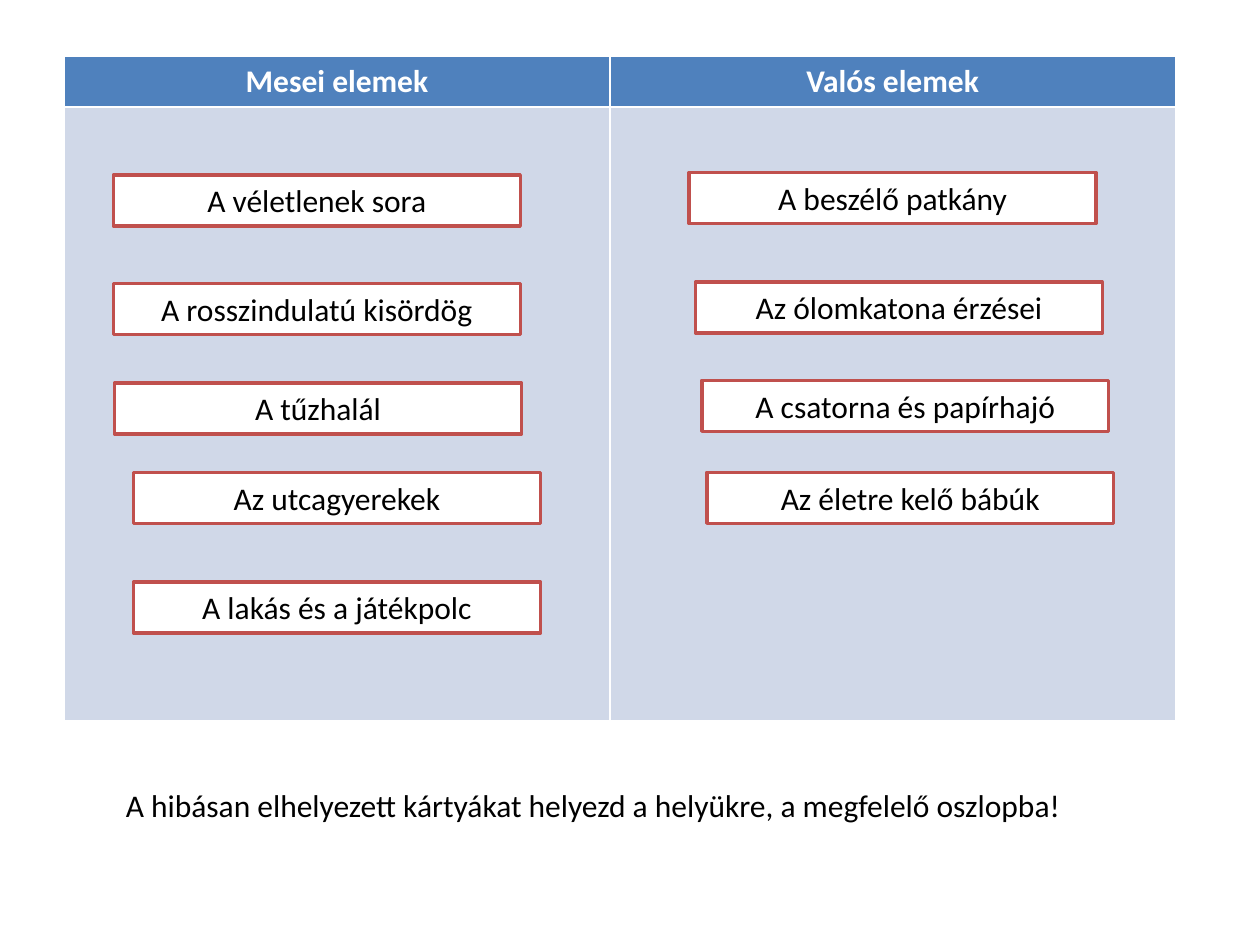
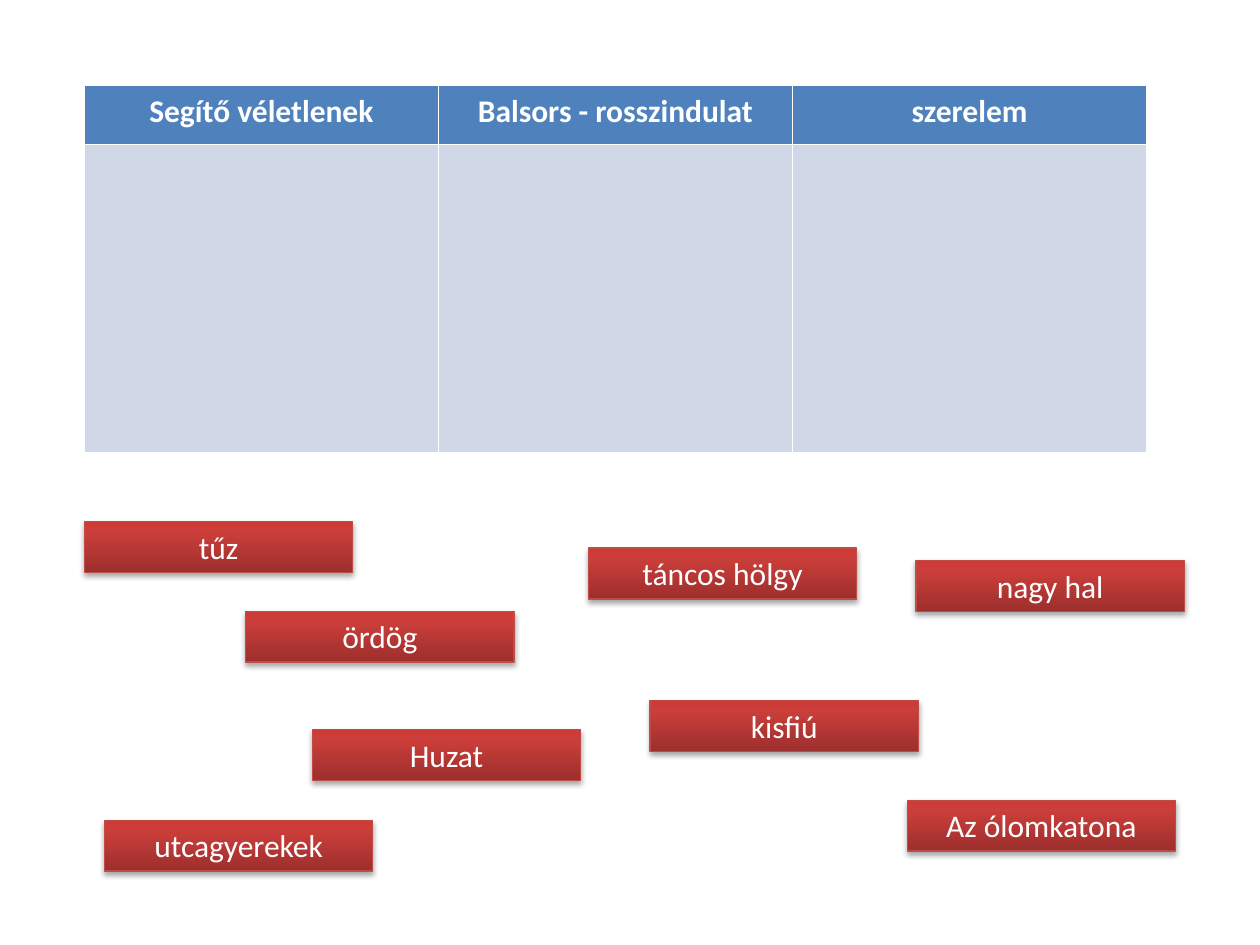
from lxml import etree
from pptx import Presentation
from pptx.dml.color import RGBColor
from pptx.enum.shapes import MSO_SHAPE
from pptx.enum.text import MSO_ANCHOR, MSO_AUTO_SIZE, PP_ALIGN
from pptx.oxml import parse_xml
from pptx.oxml.ns import nsdecls, qn
from pptx.util import Inches, Pt

RECTANGLE = MSO_SHAPE.RECTANGLE
TOP = MSO_ANCHOR.TOP
GROW = MSO_AUTO_SIZE.SHAPE_TO_FIT_TEXT
LEFT, CENTER = PP_ALIGN.LEFT, PP_ALIGN.CENTER

WHITE = RGBColor(0xFF, 0xFF, 0xFF)
BLACK = RGBColor(0, 0, 0)
HEADER_BLUE = RGBColor(0x4F, 0x81, 0xBD)
BODY_BLUE = RGBColor(0xD0, 0xD8, 0xE8)
CARD_BORDER = RGBColor(0xC0, 0x50, 0x4D)
WORD_BORDER = RGBColor(0xBF, 0x4C, 0x48)
WORD_GRADIENT = (
    (0, RGBColor(0x9C, 0x2F, 0x2D)),
    (80, RGBColor(0xCB, 0x3E, 0x3A)),
    (100, RGBColor(0xCE, 0x3B, 0x37)),
)

FONT = "Calibri"
TEXT_SIZE = Pt(18)
SLIDE_WIDTH, SLIDE_HEIGHT = Inches(10), Inches(7.5)
LABEL_HEIGHT = 5.38
CARD_WIDTH = 32.3
WORD_WIDTH = 21.3

STORY_CARDS = (
    ("A véletlenek sora", 9, 18.53),
    ("A rosszindulatú kisördög", 9, 30),
    ("A tűzhalál", 9.1, 40.53),
    ("Az utcagyerekek", 10.6, 50),
    ("A lakás és a játékpolc", 10.6, 61.6),
    ("A beszélő patkány", 54.7, 18.27),
    ("Az ólomkatona érzései", 55.2, 29.87),
    ("A csatorna és papírhajó", 55.7, 40.27),
    ("Az életre kelő bábúk", 56.1, 50),
)
WORDS = (
    ("tűz", 6.7, 55.2),
    ("ördög", 19.5, 64.67),
    ("Huzat", 24.8, 77.2),
    ("utcagyerekek", 8.3, 86.8),
    ("táncos hölgy", 46.7, 58),
    ("kisfiú", 51.6, 74.13),
    ("nagy hal", 72.7, 59.33),
    ("Az ólomkatona", 72, 84.67),
)


def across(percent):
    return round(SLIDE_WIDTH * percent / 100)


def down(percent):
    return round(SLIDE_HEIGHT * percent / 100)


def place(left, top, width, height):
    return across(left), down(top), across(width), down(height)


def write(frame, text, color, align=CENTER, bold=False):
    frame.text = text
    paragraph = frame.paragraphs[0]
    paragraph.alignment = align
    for run in paragraph.runs:
        run.font.name = FONT
        run.font.size = TEXT_SIZE
        run.font.bold = bold
        run.font.color.rgb = color


def add_sorting_table(slide, left, top, headings, widths, heights):
    area = place(left, top, sum(widths), sum(heights))
    table = slide.shapes.add_table(2, len(headings), *area).table
    for row, height in zip(table.rows, heights):
        row.height = down(height)
    for index, (heading, width) in enumerate(zip(headings, widths)):
        table.columns[index].width = across(width)
        for row, color in enumerate((HEADER_BLUE, BODY_BLUE)):
            fill = table.cell(row, index).fill
            fill.solid()
            fill.fore_color.rgb = color
        write(table.cell(0, index).text_frame, heading, WHITE, bold=True)


def add_label(slide, text, left, top, width, color, border, border_width):
    label = slide.shapes.add_shape(RECTANGLE, *place(left, top, width, LABEL_HEIGHT))
    label.shadow.inherit = False
    label.line.color.rgb = border
    label.line.width = border_width
    frame = label.text_frame
    frame.word_wrap = True
    frame.auto_size = GROW
    frame.vertical_anchor = TOP
    write(frame, text, color)
    return label


def add_card(slide, text, left, top):
    card = add_label(slide, text, left, top, CARD_WIDTH, BLACK, CARD_BORDER, Pt(2))
    card.fill.solid()
    card.fill.fore_color.rgb = WHITE


def set_word_gradient(fill):
    fill.gradient()
    stops = fill._xPr.find(qn("a:gradFill")).find(qn("a:gsLst"))
    for stop in list(stops):
        stops.remove(stop)
    for percent, color in WORD_GRADIENT:
        stop = etree.SubElement(stops, qn("a:gs"), pos=str(percent * 1000))
        etree.SubElement(stop, qn("a:srgbClr"), val=str(color))
    fill._xPr.find(qn("a:gradFill")).find(qn("a:lin")).set("ang", str(270 * 60000))


def set_soft_shadow(shape):
    effects = shape._element.spPr.find(qn("a:effectLst"))
    effects.append(parse_xml(
        f'<a:outerShdw {nsdecls("a")} blurRad="{Pt(3.1)}" dist="{Pt(1.8)}" '
        f'dir="{90 * 60000}" rotWithShape="0"><a:srgbClr val="{BLACK}">'
        '<a:alpha val="35000"/></a:srgbClr></a:outerShdw>'
    ))


def add_word(slide, text, left, top):
    word = add_label(slide, text, left, top, WORD_WIDTH, WHITE, WORD_BORDER, Pt(0.75))
    set_word_gradient(word.fill)
    set_soft_shadow(word)


def add_instruction(slide, text, left, top, width):
    instruction = slide.shapes.add_textbox(*place(left, top, width, LABEL_HEIGHT))
    frame = instruction.text_frame
    frame.word_wrap = True
    frame.auto_size = GROW
    write(frame, text, BLACK, LEFT)


def main():
    presentation = Presentation()
    presentation.slide_width = SLIDE_WIDTH
    presentation.slide_height = SLIDE_HEIGHT
    blank = presentation.slide_layouts[6]

    story = presentation.slides.add_slide(blank)
    add_sorting_table(story, 5.1, 5.9, ("Mesei elemek", "Valós elemek"),
                      (43.3, 44.9), (5.38, 64.95))
    for card in STORY_CARDS:
        add_card(story, *card)
    add_instruction(
        story,
        "A hibásan elhelyezett kártyákat helyezd a helyükre, a megfelelő oszlopba!",
        9, 82.53, 80.4,
    )

    fate = presentation.slides.add_slide(blank)
    add_sorting_table(fate, 6.7, 9.07,
                      ("Segítő véletlenek", "Balsors - rosszindulat", "szerelem"),
                      (28.1,) * 3, (6.2, 32.67))
    for word in WORDS:
        add_word(fate, *word)

    presentation.save("out.pptx")


if __name__ == "__main__":
    main()
